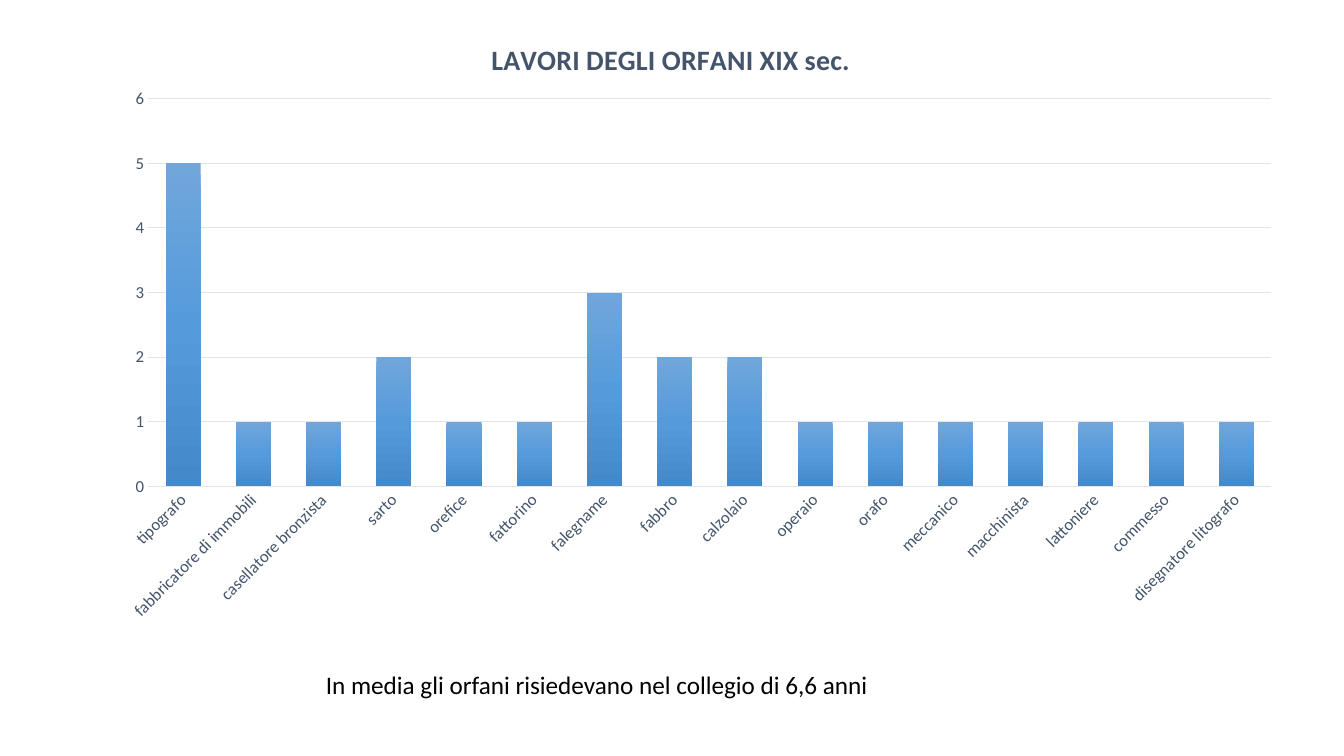
import typing

import lxml.etree
import pptx
import pptx.chart.axis
import pptx.chart.chart
import pptx.chart.data
import pptx.chart.series
import pptx.dml.color
import pptx.enum.chart
import pptx.enum.text
import pptx.oxml.ns
import pptx.text.text
import pptx.util

SCALE = 914400 / 100.8
FONT = "Calibri"
SLATE = "44546A"
PALE = "E0E5EB"


class Box(typing.NamedTuple):
    left: int
    top: int
    width: int
    height: int


class Job(typing.NamedTuple):
    name: str
    count: int


class Stop(typing.NamedTuple):
    place: int
    color: str


JOBS = [
    Job("tipografo", 5),
    Job("fabbricatore di immobili", 1),
    Job("casellatore bronzista", 1),
    Job("sarto", 2),
    Job("orefice", 1),
    Job("fattorino", 1),
    Job("falegname", 3),
    Job("fabbro", 2),
    Job("calzolaio", 2),
    Job("operaio", 1),
    Job("orafo", 1),
    Job("meccanico", 1),
    Job("macchinista", 1),
    Job("lattoniere", 1),
    Job("commesso", 1),
    Job("disegnatore litografo", 1),
]
STOPS = [Stop(0, "71A6DB"), Stop(50, "559BDB"), Stop(100, "448ACA")]
CHART = Box(70, 17, 1202, 625)
NOTE = Box(316, 664, 853, 40)
PLOT = {"x": 0.065, "y": 0.131, "w": 0.935, "h": 0.62}


def emu(px: int) -> int:
    return round(px * SCALE)


def place(box: Box) -> list[int]:
    return [emu(side) for side in box]


def rgb(color: str) -> pptx.dml.color.RGBColor:
    return pptx.dml.color.RGBColor.from_string(color)


def add(parent: typing.Any, tag: str, **attrs: str) -> typing.Any:
    return lxml.etree.SubElement(parent, pptx.oxml.ns.qn(tag), **attrs)


def style(font: pptx.text.text.Font, size: int, color: str, bold: bool = False) -> None:
    font.name = FONT
    font.size = pptx.util.Pt(size)
    font.bold = bold
    font.color.rgb = rgb(color)


def rule(line: typing.Any) -> None:
    line.color.rgb = rgb(PALE)
    line.width = pptx.util.Pt(0.75)


def set_axis(axis: typing.Any) -> None:
    axis.major_tick_mark = pptx.enum.chart.XL_TICK_MARK.NONE
    axis.minor_tick_mark = pptx.enum.chart.XL_TICK_MARK.NONE
    style(axis.tick_labels.font, 12, SLATE)


def set_plot(chart: pptx.chart.chart.Chart) -> None:
    area = chart._chartSpace.chart.plotArea
    for old in area.findall(pptx.oxml.ns.qn("c:layout")):
        area.remove(old)
    layout = add(area, "c:layout")
    area.insert(0, layout)
    manual = add(layout, "c:manualLayout")
    add(manual, "c:layoutTarget", val="inner")
    for side in "xy":
        add(manual, f"c:{side}Mode", val="edge")
    for side, value in PLOT.items():
        add(manual, f"c:{side}", val=str(value))


def shade(bars: pptx.chart.series.BarSeries) -> None:
    fill = bars.format.fill
    fill.gradient()
    fill.gradient_angle = 270
    stops = next(bars._element.iter(pptx.oxml.ns.qn("a:gsLst")))
    for old in list(stops):
        stops.remove(old)
    for stop in STOPS:
        mark = add(stops, "a:gs", pos=str(stop.place * 1000))
        add(mark, "a:srgbClr", val=stop.color)


def add_jobs(slide: typing.Any) -> None:
    data = pptx.chart.data.CategoryChartData()
    data.categories = [job.name for job in JOBS]
    data.add_series("Series 1", [job.count for job in JOBS])
    kind = pptx.enum.chart.XL_CHART_TYPE.COLUMN_CLUSTERED
    chart = slide.shapes.add_chart(kind, *place(CHART), data).chart
    style(chart.font, 10, "000000")
    chart.has_legend = False
    chart.has_title = True
    title = chart.chart_title
    title.include_in_layout = False
    para = title.text_frame.paragraphs[0]
    para.text = "LAVORI DEGLI ORFANI XIX sec."
    style(para.font, 20, SLATE, bold=True)

    set_axis(chart.category_axis)
    rule(chart.category_axis.format.line)
    body = next(chart.category_axis._element.iter(pptx.oxml.ns.qn("a:bodyPr")))
    body.set("rot", "-2700000")
    body.set("vert", "horz")

    values = chart.value_axis
    set_axis(values)
    values.minimum_scale, values.maximum_scale, values.major_unit = 0, 6, 1
    values.format.line.fill.background()
    values.has_major_gridlines = True
    rule(values.major_gridlines.format.line)

    plot = chart.plots[0]
    plot.vary_by_categories = False
    plot.gap_width = 100
    plot.overlap = -24
    shade(plot.series[0])
    set_plot(chart)


def add_note(slide: typing.Any) -> None:
    frame = slide.shapes.add_textbox(*place(NOTE)).text_frame
    frame.word_wrap = True
    frame.auto_size = pptx.enum.text.MSO_AUTO_SIZE.SHAPE_TO_FIT_TEXT
    para = frame.paragraphs[0]
    para.text = "In media gli orfani risiedevano nel collegio di 6,6 anni"
    style(para.font, 18, "000000")


def main() -> None:
    deck = pptx.Presentation()
    deck.slide_width, deck.slide_height = emu(1344), emu(756)
    slide = deck.slides.add_slide(deck.slide_layouts[6])
    add_jobs(slide)
    add_note(slide)
    deck.save("out.pptx")


if __name__ == "__main__":
    main()
